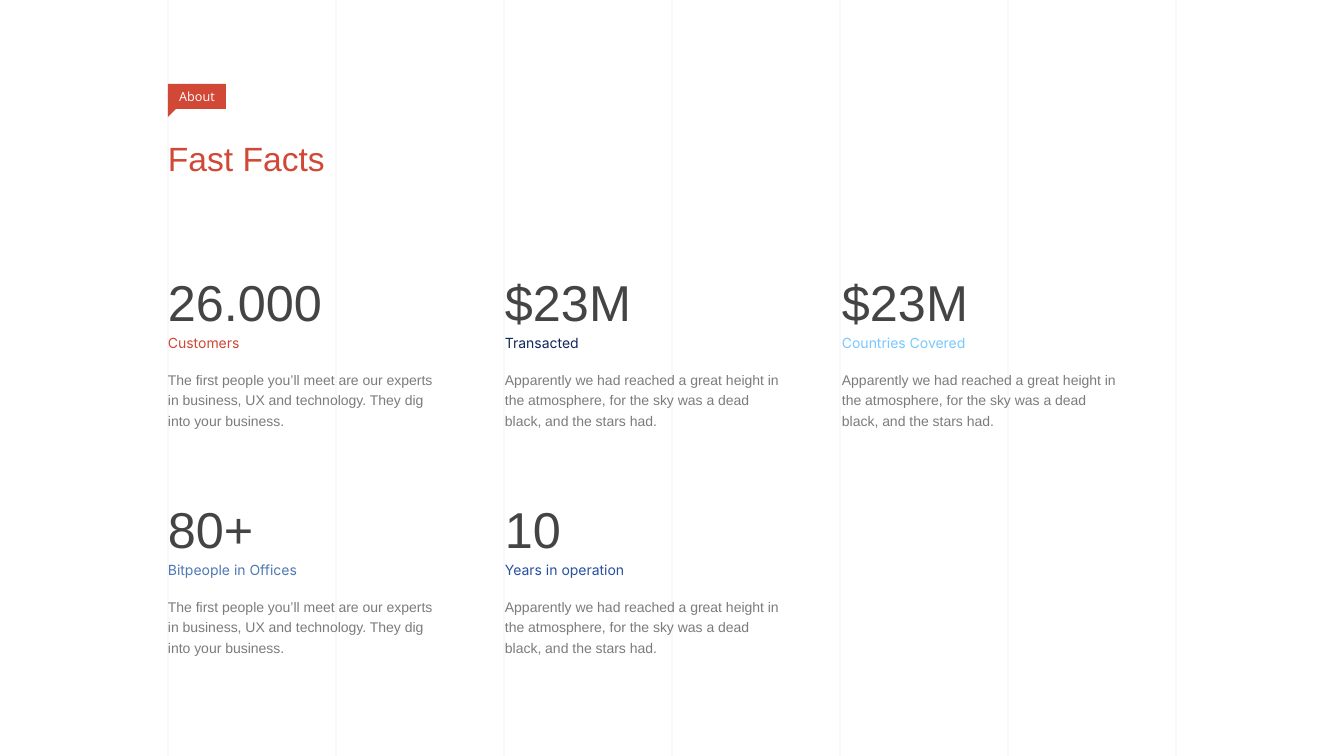
from dataclasses import dataclass

from lxml import etree
from pptx import Presentation
from pptx.dml.color import RGBColor
from pptx.enum.shapes import MSO_CONNECTOR, MSO_SHAPE
from pptx.enum.text import MSO_ANCHOR, MSO_AUTO_SIZE, PP_ALIGN
from pptx.oxml.ns import qn
from pptx.util import Emu, Pt

LINE = MSO_CONNECTOR.STRAIGHT
RECT, CORNER = MSO_SHAPE.RECTANGLE, MSO_SHAPE.RIGHT_TRIANGLE
TOP, MIDDLE = MSO_ANCHOR.TOP, MSO_ANCHOR.MIDDLE
LEFT, CENTER = PP_ALIGN.LEFT, PP_ALIGN.CENTER
NO_FIT, GROW = MSO_AUTO_SIZE.NONE, MSO_AUTO_SIZE.SHAPE_TO_FIT_TEXT

SCALE = 914400 / 100.8
WIDTH, HEIGHT = 1344, 756
EDGE, STEP, LINES = 168, 168, 7
COLS, COL_GAP, ROW_GAP = 3, 337, 227
CARD_TOP, CARD_W, CARD_H = 251, 275, 170
RED, GREY, WHITE = "D14836", "444444", "FFFFFF"

EXPERTS = ("The first people you’ll meet are our experts in business, UX "
           "and technology. They dig into your business.")
HEIGHTS = ("Apparently we had reached a great height in the atmosphere, "
           "for the sky was a dead black, and the stars had.")


@dataclass
class Fact:
    value: str
    label: str
    color: str
    text: str


FACTS = [
    Fact("26.000", "Customers", RED, EXPERTS),
    Fact("$23M", "Transacted", "10285D", HEIGHTS),
    Fact("$23M", "Countries Covered", "78C8FF", HEIGHTS),
    Fact("80+", "Bitpeople in Offices", "5078B4", EXPERTS),
    Fact("10", "Years in operation", "2850A0", HEIGHTS),
]


def px(count: int) -> Emu:
    return Emu(round(count * SCALE))


def paint(target, color: str, alpha: int = 100) -> None:
    """Give a fill a solid colour, with alpha in percent."""
    target.solid()
    target.fore_color.rgb = RGBColor.from_string(color)
    if alpha < 100:
        node = target._xPr.find(qn("a:solidFill"))[0]
        etree.SubElement(node, qn("a:alpha"), val=str(alpha * 1000))


def add_run(para, text: str, size: int, face: str, color: str,
            alpha: int = 100) -> None:
    run = para.add_run()
    run.text = text
    run.font.size = Pt(size)
    run.font.name = face
    paint(run.font.fill, color, alpha)


def set_frame(frame, top: int = 0) -> None:
    """Wrap the text and clear the insets, but for the top one."""
    frame.word_wrap = True
    frame.vertical_anchor = TOP
    frame.margin_left = frame.margin_right = frame.margin_bottom = 0
    frame.margin_top = px(top)


def add_grid(slide) -> None:
    for index in range(LINES):
        x = px(EDGE + index * STEP)
        line = slide.shapes.add_connector(LINE, x, 0, x, px(HEIGHT))
        line.line.width = Pt(0.5)
        paint(line.line.fill, GREY, 10)
        etree.SubElement(line._element.spPr, qn("a:effectLst"))


def add_title(slide) -> None:
    title = slide.shapes.title
    title.left, title.top = px(EDGE), px(138)
    title.width, title.height = px(504), px(113)
    frame = title.text_frame
    set_frame(frame)
    frame.auto_size = NO_FIT
    para = frame.paragraphs[0]
    para.alignment = LEFT
    add_run(para, "Fast Facts", 24, "Arial", RED)
    slide.shapes._spTree.append(title._element)


def add_block(group, kind, top: int, width: int, height: int):
    block = group.shapes.add_shape(
        kind, px(EDGE), px(top), px(width), px(height))
    block.shadow.inherit = False
    paint(block.fill, RED)
    block.line.fill.background()
    return block


def add_tag(slide) -> None:
    group = slide.shapes.add_group_shape()
    label = add_block(group, RECT, 84, 58, 25)
    frame = label.text_frame
    frame.word_wrap = False
    frame.vertical_anchor = MIDDLE
    para = frame.paragraphs[0]
    para.alignment = CENTER
    add_run(para, "About", 9, "Open Sans", WHITE)
    tail = add_block(group, CORNER, 109, 8, 8)
    tail._element.spPr.find(qn("a:xfrm")).set("flipV", "1")


def add_fact(slide, fact: Fact, left: int, top: int) -> None:
    box = slide.shapes.add_textbox(
        px(left), px(top), px(CARD_W), px(CARD_H))
    frame = box.text_frame
    set_frame(frame, 8)
    frame.auto_size = GROW
    head = frame.paragraphs[0]
    head.line_spacing = 1.2
    add_run(head, fact.value, 36, "Arial", GREY)
    head.add_line_break()
    add_run(head, fact.label, 10, "Inter", fact.color)
    body = frame.add_paragraph()
    body.line_spacing = 1.2
    body.space_before = Pt(12)
    add_run(body, fact.text, 10, "Arial", GREY, 70)


def main() -> None:
    deck = Presentation()
    deck.slide_width, deck.slide_height = px(WIDTH), px(HEIGHT)
    slide = deck.slides.add_slide(deck.slide_layouts[5])
    paint(slide.background.fill, WHITE)
    add_grid(slide)
    add_title(slide)
    add_tag(slide)
    for index, fact in enumerate(FACTS):
        row, col = divmod(index, COLS)
        add_fact(slide, fact, EDGE + col * COL_GAP, CARD_TOP + row * ROW_GAP)
    deck.save("out.pptx")


if __name__ == "__main__":
    main()
